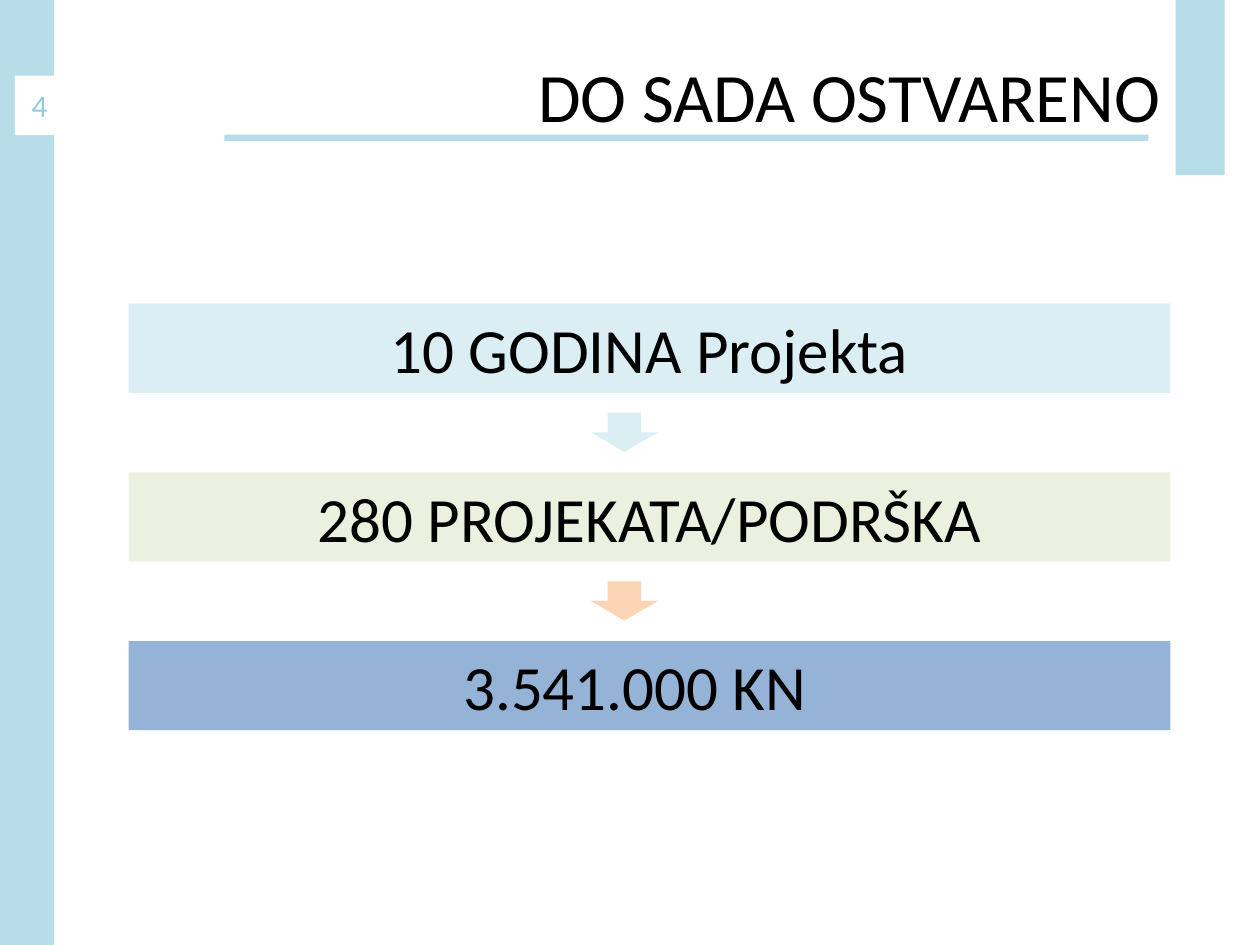
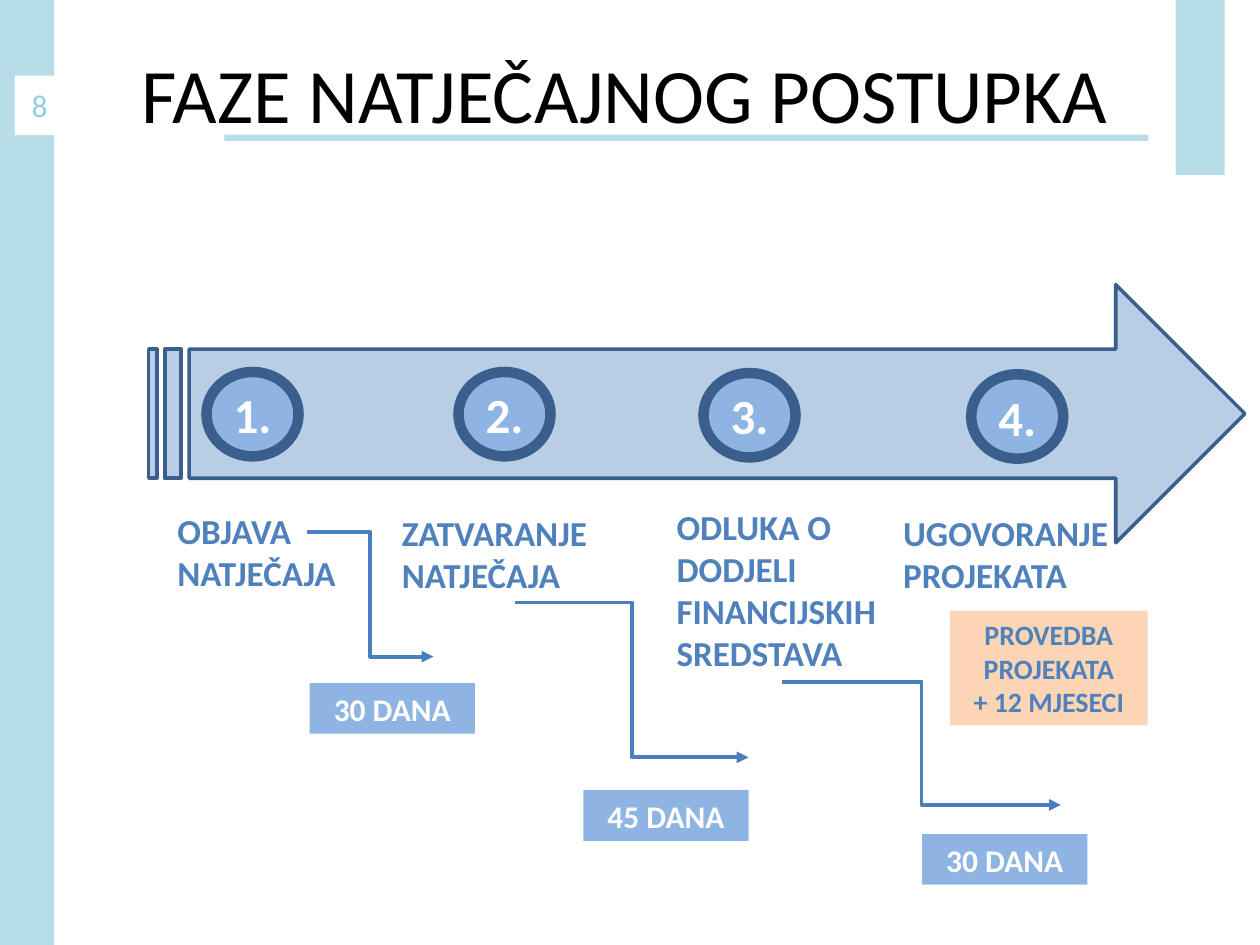
from lxml import etree
from pptx import Presentation
from pptx.dml.color import RGBColor
from pptx.enum.shapes import MSO_CONNECTOR, MSO_SHAPE
from pptx.enum.text import MSO_ANCHOR, MSO_AUTO_SIZE, PP_ALIGN
from pptx.oxml.ns import qn
from pptx.util import Pt

FONT = "Calibri"
BLACK, WHITE = "000000", "FFFFFF"
BAND, NUMBER = "B7DEE8", "93CDDD"
ICE, LIME, PEACH, STEEL = "DBEEF4", "EBF1DE", "FCD5B5", "95B3D7"
ARROW, OUTLINE, BADGE = "B9CDE5", "3A5F8C", "8EB4E3"
LABEL, LINK = "4F81BD", "4B7EBC"


def color(hex_value):
    return RGBColor.from_string(hex_value)


def write(shape, text, size, hex_value, bold=False, align=PP_ALIGN.CENTER,
          anchor=MSO_ANCHOR.MIDDLE, right_inset=7.2):
    frame = shape.text_frame
    frame.text = text
    frame.word_wrap = True
    frame.auto_size = MSO_AUTO_SIZE.NONE
    frame.vertical_anchor = anchor
    frame.margin_right = Pt(right_inset)
    for paragraph in frame.paragraphs:
        paragraph.alignment = align
        paragraph.font.name = FONT
        paragraph.font.size = Pt(size)
        paragraph.font.bold = bold
        paragraph.font.color.rgb = color(hex_value)


def add_block(slide, box, fill, kind=MSO_SHAPE.RECTANGLE, line_width=0):
    shape = slide.shapes.add_shape(kind, *map(Pt, box))
    shape.shadow.inherit = False
    shape.fill.solid()
    shape.fill.fore_color.rgb = color(fill)
    if line_width:
        shape.line.color.rgb = color(OUTLINE)
        shape.line.width = Pt(line_width)
    else:
        shape.line.fill.background()
    return shape


def add_link(slide, start, end):
    connector = slide.shapes.add_connector(
        MSO_CONNECTOR.ELBOW, *map(Pt, (*start, *end)))
    connector.line.color.rgb = color(LINK)
    connector.line.width = Pt(2.25)
    properties = connector._element.spPr
    etree.SubElement(properties.find(qn("a:ln")), qn("a:tailEnd"), type="triangle")
    etree.SubElement(properties, qn("a:effectLst"))


def add_framed_slide(presentation, number, title, box, size, align, right_inset):
    slide = presentation.slides.add_slide(presentation.slide_layouts[5])
    heading = slide.shapes.title
    heading.left, heading.top, heading.width, heading.height = map(Pt, box)
    write(heading, title, size, BLACK, align=align, right_inset=right_inset)
    add_block(slide, (0, 0, 31, 540), BAND)
    number_box = add_block(slide, (8.6, 43.2, 28, 34), WHITE)
    write(number_box, number, 18, NUMBER)
    add_block(slide, (128.2, 77, 528, 3.6), BAND)
    add_block(slide, (671.8, 0, 28, 100), BAND)
    return slide


def add_results(slide, left, top, width):
    row_height, step = 51, 96.4
    rows = [
        ("10 GODINA Projekta", ICE, 7.2),
        ("280 PROJEKATA/PODRŠKA", LIME, 7.2),
        ("3.541.000 KN", STEEL, 24),
    ]
    for index, (text, fill, right_inset) in enumerate(rows):
        row = add_block(slide, (left, top + index * step, width, row_height), fill)
        write(row, text, 36, BLACK, right_inset=right_inset)
    for index, fill in enumerate((ICE, PEACH)):
        box = (left + 264.2, top + index * step + 62.3, 38.2, 22.5)
        add_block(slide, box, fill, MSO_SHAPE.DOWN_ARROW)


def add_phases(slide, left, top, width):
    def place(x, y, *size):
        return (left + x, top + y, *size)

    add_block(slide, place(0, 0, width, 147.6), ARROW,
              MSO_SHAPE.STRIPED_RIGHT_ARROW, 2)

    phases = [
        ("OBJAVA\nNATJEČAJA", (33, 50), (9.3, 124.8, 175.7, 55.4)),
        ("ZATVARANJE NATJEČAJA", (177, 50), (137.5, 126.2, 129, 55.4)),
        ("ODLUKA O DODJELI FINANCIJSKIH SREDSTAVA", (317, 50.6),
         (294.5, 122.6, 129, 104.4)),
        ("UGOVORANJE PROJEKATA", (470, 51.3), (424, 126.2, 147.6, 55.4)),
    ]
    for number, (text, badge_at, label_box) in enumerate(phases, 1):
        badge = add_block(slide, place(*badge_at, 52.6, 48.2), BADGE,
                          MSO_SHAPE.OVAL, 6)
        badge.text_frame.margin_left = 0
        write(badge, f"{number}.", 28, WHITE, bold=True, right_inset=0)
        label = slide.shapes.add_textbox(*map(Pt, place(*label_box)))
        write(label, text, 20, LABEL, bold=True, align=PP_ALIGN.LEFT,
              anchor=MSO_ANCHOR.TOP)

    periods = [
        ("30 DANA", (90.7, 141.3), (162.7, 212.6), (92, 227.7)),
        ("45 DANA", (209.5, 181.7), (342.7, 270.2), (248.4, 288.9)),
        ("30 DANA", (362, 227), (521.2, 297.4), (442, 314)),
    ]
    for text, start, end, period_at in periods:
        add_link(slide, place(*start), place(*end))
        period = add_block(slide, place(*period_at, 94.4, 29), BADGE)
        write(period, text, 18, WHITE, bold=True)

    delivery = add_block(slide, place(457.9, 186.5, 113, 65.5), PEACH)
    write(delivery, "PROVEDBA PROJEKATA\n+ 12 MJESECI", 16, LABEL, bold=True)


def main():
    presentation = Presentation()
    presentation.slide_width, presentation.slide_height = Pt(720), Pt(540)
    results = add_framed_slide(presentation, "4", "DO SADA OSTVARENO",
                               (36.7, 9.4, 648, 90), 39.6, PP_ALIGN.RIGHT, 21.6)
    add_results(results, 73.5, 173.5, 595.4)
    phases = add_framed_slide(presentation, "8", "FAZE NATJEČAJNOG POSTUPKA",
                              (38.2, 7.9, 648, 90), 44, PP_ALIGN.CENTER, 17)
    add_phases(phases, 85, 162.6, 626.4)
    presentation.save("out.pptx")


if __name__ == "__main__":
    main()
